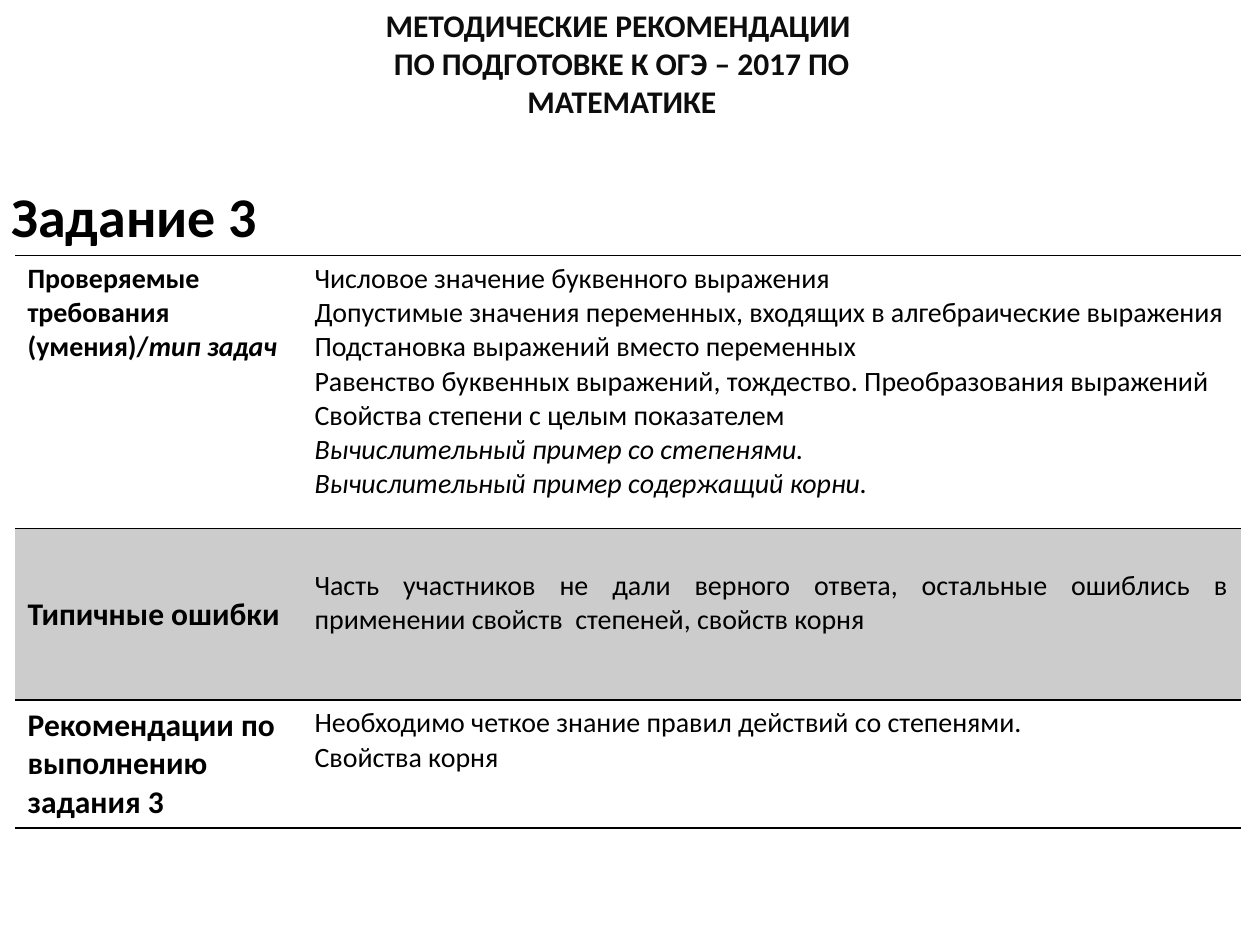
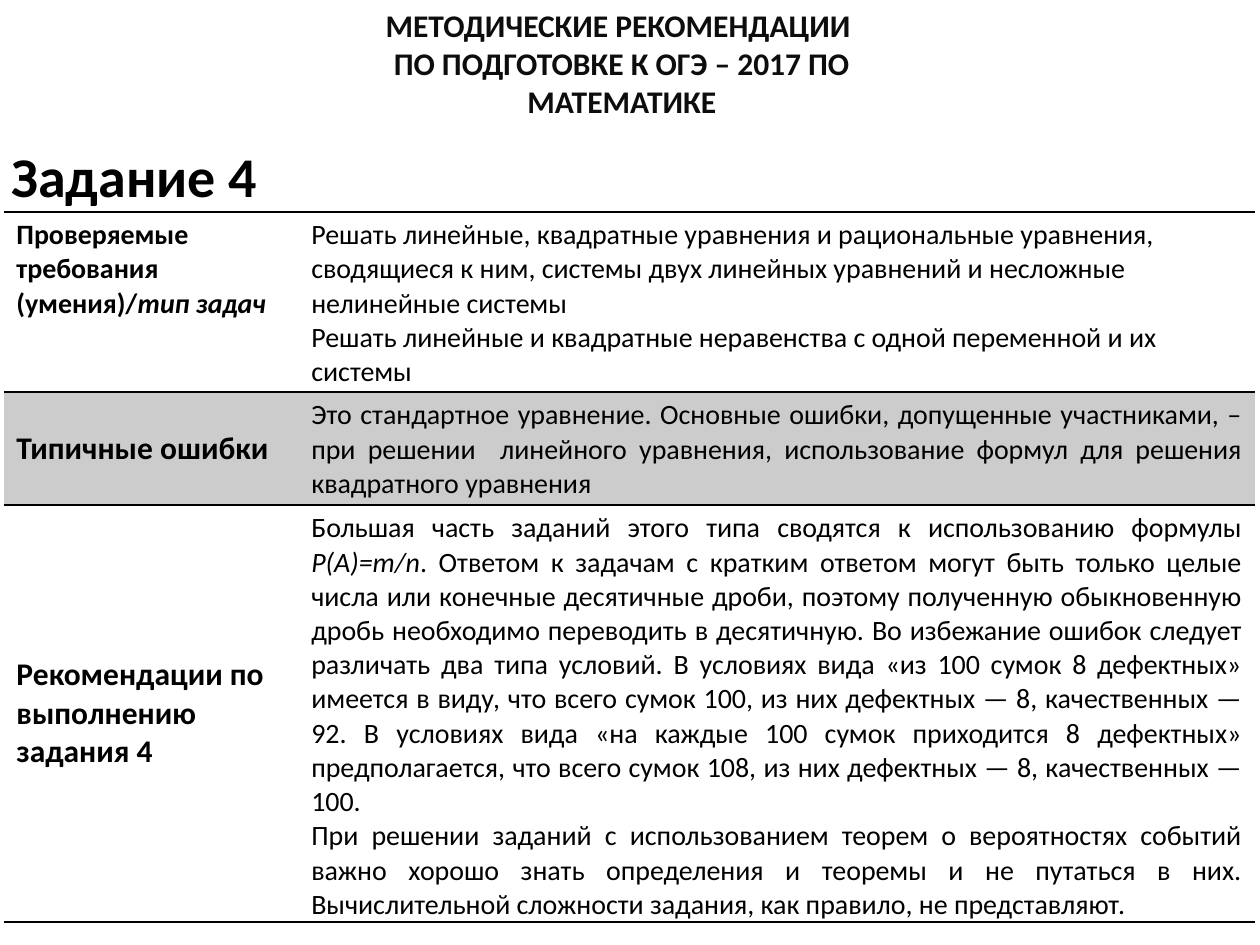
from lxml import etree
from pptx import Presentation
from pptx.dml.color import RGBColor
from pptx.enum import text
from pptx.oxml import ns
from pptx.util import Pt

TITLE_ONLY = 5
NO_TABLE_STYLE = "{2D5ABB26-0587-4C30-8999-92F81FD0307C}"
LEFT, CENTER, JUSTIFY = (text.PP_ALIGN.LEFT, text.PP_ALIGN.CENTER,
                         text.PP_ALIGN.JUSTIFY)
TOP, MIDDLE = text.MSO_ANCHOR.TOP, text.MSO_ANCHOR.MIDDLE

HEADER = ["МЕТОДИЧЕСКИЕ РЕКОМЕНДАЦИИ ",
          "ПО ПОДГОТОВКЕ К ОГЭ – 2017 ПО МАТЕМАТИКЕ"]

# Each task: title top, table place and sizes, then the three body cells.
# Text between asterisks is italic.
TASKS = [
    dict(number=3, title_top=100, left=8.6, top=146, cols=[164, 536.5],
         rows=[156, 98, 73], mistakes_inset=23.1,
         skills=[
             "Числовое значение буквенного выражения",
             "Допустимые значения переменных, входящих в алгебраические выражения",
             "Подстановка выражений вместо переменных",
             "Равенство буквенных выражений, тождество. Преобразования выражений",
             "Свойства степени с целым показателем",
             "*Вычислительный пример со степенями.*",
             "*Вычислительный пример содержащий корни.*"],
         mistakes=[
             "Часть участников не дали верного ответа, остальные ошиблись в "
             "применении свойств  степеней, свойств корня"],
         advice=[
             "Необходимо четкое знание правил действий со степенями.",
             "Свойства корня"]),
    dict(number=4, title_top=77, left=2.2, top=121, cols=[168.5, 546.5],
         rows=[103, 64.5, 238], mistakes_inset=3.6,
         skills=[
             "Решать линейные, квадратные уравнения и рациональные уравнения, "
             "сводящиеся к ним, системы двух линейных уравнений и несложные "
             "нелинейные системы",
             "Решать линейные и квадратные неравенства с одной переменной и их "
             "системы"],
         mistakes=[
             "Это стандартное уравнение. Основные ошибки, допущенные "
             "участниками, – при решении  линейного уравнения, использование "
             "формул для решения квадратного уравнения"],
         advice=[
             "Большая часть заданий этого типа сводятся к использованию формулы "
             "*Р(А)=m/n*. Ответом к задачам с кратким ответом могут быть только "
             "целые числа или конечные десятичные дроби, поэтому полученную "
             "обыкновенную дробь необходимо переводить в десятичную. Во "
             "избежание ошибок следует различать два типа условий. В условиях "
             "вида «из 100 сумок 8 дефектных» имеется в виду, что всего сумок "
             "100, из них дефектных — 8, качественных — 92. В условиях вида «на "
             "каждые 100 сумок приходится 8 дефектных» предполагается, что "
             "всего сумок 108, из них дефектных — 8, качественных — 100.",
             "При решении заданий с использованием теорем о вероятностях "
             "событий важно хорошо знать определения и теоремы и не путаться в "
             "них. Вычислительной сложности задания, как правило, не "
             "представляют."]),
]


def rgb(color):
    return RGBColor.from_string(color)


def assign(obj, values):
    for name, value in values.items():
        setattr(obj, name, value)


class Deck:
    font, ink, header_ink, band = "Calibri", "000000", "0D0D0D", "CCCCCC"

    def __init__(self):
        self.prs = Presentation()
        assign(self.prs, dict(slide_width=Pt(720), slide_height=Pt(540)))
        self.s = None

    def new_slide(self):
        self.s = self.prs.slides.add_slide(self.prs.slide_layouts[TITLE_ONLY])

    def paragraphs(self, tf, lines, size, bold=False, align=LEFT, color=ink):
        for i, line in enumerate(lines):
            p = tf.paragraphs[0] if i == 0 else tf.add_paragraph()
            p.alignment = align
            for j, words in enumerate(line.split("*")):
                if not words:
                    continue
                r = p.add_run()
                r.text = words
                assign(r.font, dict(name=self.font, size=Pt(size), bold=bold,
                                    italic=j % 2 == 1))
                r.font.color.rgb = rgb(color)

    def title(self, words, top):
        sp = self.s.shapes.title
        assign(sp, dict(left=Pt(-0.7), top=Pt(top), width=Pt(156), height=Pt(46)))
        tf = sp.text_frame
        assign(tf, dict(word_wrap=False, vertical_anchor=TOP,
                        auto_size=text.MSO_AUTO_SIZE.NONE))
        self.paragraphs(tf, [words], 32, bold=True)

    def header(self):
        sp = self.s.shapes.add_textbox(Pt(162.7), Pt(0), Pt(385.2), Pt(72.7))
        sp.text_frame.word_wrap = True
        self.paragraphs(sp.text_frame, HEADER, 18, True, CENTER, self.header_ink)

    def table(self, left, top, cols, rows):
        frame = self.s.shapes.add_table(len(rows), len(cols), Pt(left), Pt(top),
                                        Pt(sum(cols)), Pt(sum(rows)))
        table = frame.table
        assign(table, dict(first_row=False, horz_banding=False))
        table._tbl.tblPr.find(ns.qn("a:tableStyleId")).text = NO_TABLE_STYLE
        for col, width in zip(table.columns, cols):
            col.width = Pt(width)
        for row, height in zip(table.rows, rows):
            row.height = Pt(height)
        return table

    def cell(self, cell, lines, size, bold=False, align=LEFT, anchor=TOP,
             inset=(3.6, 3.6), edges=(), fill=None):
        assign(cell, dict(vertical_anchor=anchor, margin_top=Pt(inset[0]),
                          margin_bottom=Pt(inset[1])))
        self.paragraphs(cell.text_frame, lines, size, bold, align)
        # Borders come before the fill in the cell properties
        for edge in edges:
            ln = etree.SubElement(cell._tc.get_or_add_tcPr(), ns.qn("a:" + edge),
                                  w=str(Pt(1)))
            solid = etree.SubElement(ln, ns.qn("a:solidFill"))
            etree.SubElement(solid, ns.qn("a:srgbClr"), val=self.ink)
        if fill:
            cell.fill.solid()
            cell.fill.fore_color.rgb = rgb(fill)
        else:
            cell.fill.background()

    def task(self, task):
        self.new_slide()
        self.title(f"Задание {task['number']}", task["title_top"])
        table = self.table(task["left"], task["top"], task["cols"], task["rows"])
        # label, label size, label anchor, body, body align, body top, edges, fill
        rows = [
            ("Проверяемые требования (умения)/*тип задач*", 16, TOP,
             task["skills"], LEFT, 3.6, ("lnT", "lnB"), None),
            ("Типичные ошибки", 18, MIDDLE,
             task["mistakes"], JUSTIFY, task["mistakes_inset"], ("lnT",), self.band),
            (f"Рекомендации по выполнению задания {task['number']}", 18, MIDDLE,
             task["advice"], JUSTIFY, 3.6, ("lnB",), None),
        ]
        for i, (label, size, anchor, body, align, inset, edges, fill) in enumerate(rows):
            look = dict(edges=edges, fill=fill)
            self.cell(table.cell(i, 0), [label], size, True, anchor=anchor, **look)
            self.cell(table.cell(i, 1), body, 16, align=align, inset=(inset, 0), **look)
        self.header()


def main():
    deck = Deck()
    for task in TASKS:
        deck.task(task)
    deck.prs.save("out.pptx")


if __name__ == "__main__":
    main()
